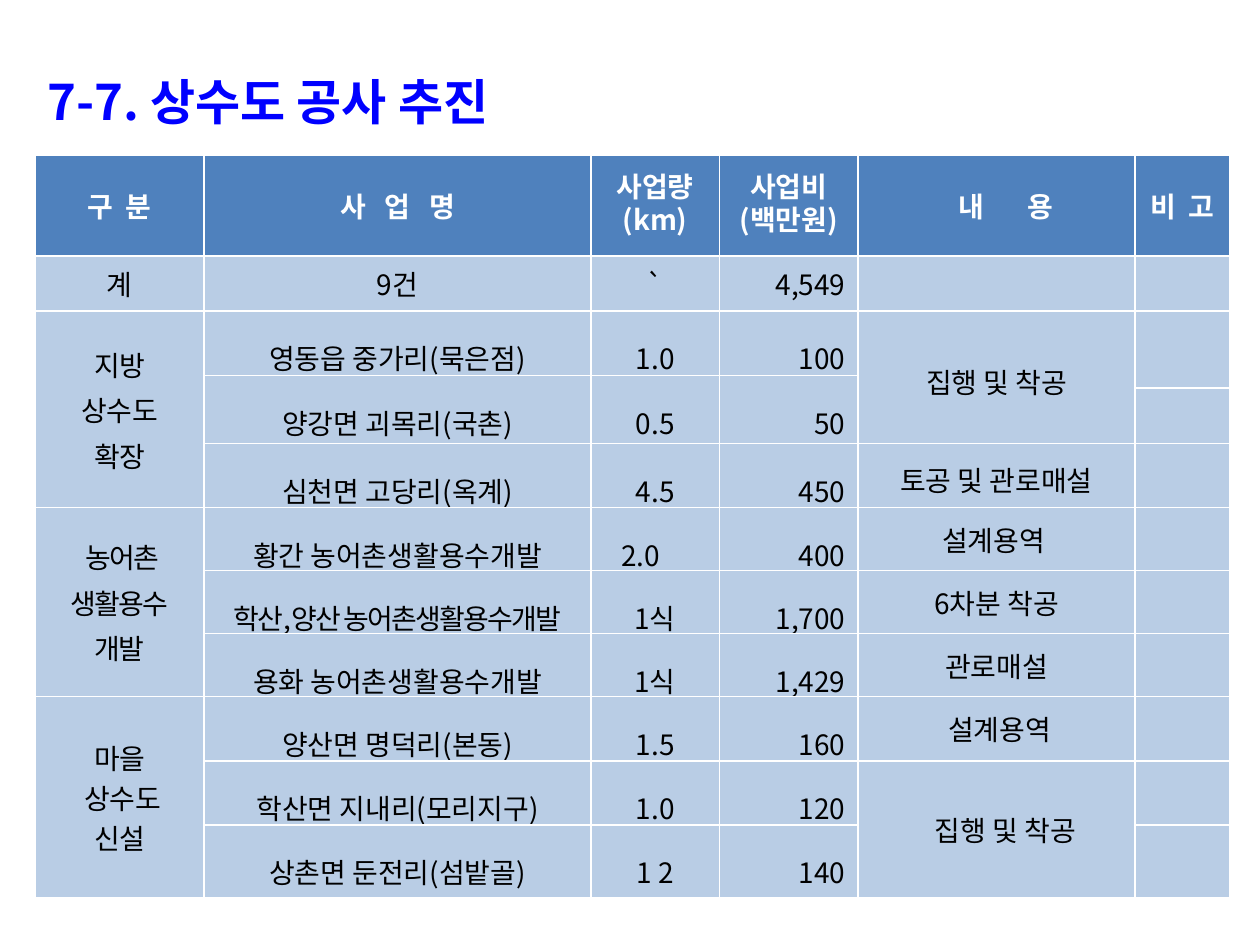
from lxml import etree
from pptx import Presentation
from pptx.dml.color import RGBColor
from pptx.enum.text import MSO_ANCHOR, MSO_AUTO_SIZE, PP_ALIGN
from pptx.oxml.ns import qn
from pptx.util import Inches, Pt

LEFT, CENTER, RIGHT = PP_ALIGN.LEFT, PP_ALIGN.CENTER, PP_ALIGN.RIGHT
MIDDLE = MSO_ANCHOR.MIDDLE
FONT = "Noto Sans CJK KR"
BLUE = RGBColor(0x00, 0x00, 0xFF)
HEADER_FILL = RGBColor(0x4F, 0x81, 0xBD)
BODY_FILL = RGBColor(0xB9, 0xCD, 0xE5)
WHITE = RGBColor(0xFF, 0xFF, 0xFF)
BLACK = RGBColor(0x00, 0x00, 0x00)

TITLE = "7-7. 상수도 공사 추진"
COL_WIDTHS = [1.34, 3.07, 1.02, 1.1, 2.2, 0.75]
ROW_HEIGHTS = [0.8, 0.44, 0.51, 0.1, 0.44, 0.51, 0.5, 0.5, 0.5, 0.51, 0.51, 0.58]
TABLE_LEFT, TABLE_TOP = 0.28, 1.23
CELL_MARGIN = 0.1

# text, format
HEADERS = [
    ("구 분", dict(tracking=1.8)),
    ("사 업 명", dict(tracking=3.6)),
    ("사업량\n(km)", dict(line=0.7)),
    ("사업비\n(백만원)", dict(line=0.7)),
    ("내 용", dict(tracking=10.8, shift=0.15)),
    ("비 고", dict(tracking=1.8)),
]
TOTALS = ["계", "9건", "`", "4,549"]

# first row, project, quantity, cost
PROJECTS = [
    (2, "영동읍 중가리(묵은점)", "1.0", "100"),
    (3, "양강면 괴목리(국촌)", "0.5", "50"),
    (5, "심천면 고당리(옥계)", "4.5", "450"),
    (6, "황간 농어촌생활용수개발", "2.0", "400"),
    (7, "학산,양산 농어촌생활용수개발", "1식", "1,700"),
    (8, "용화 농어촌생활용수개발", "1식", "1,429"),
    (9, "양산면 명덕리(본동)", "1.5", "160"),
    (10, "학산면 지내리(모리지구)", "1.0", "120"),
    (11, "상촌면 둔전리(섬밭골)", "1 2", "140"),
]
TIGHT_ROW, LEFT_QUANTITY_ROW = 7, 6

# first row, text, format
CATEGORIES = [
    (2, "지방\n상수도\n확장", {}),
    (6, " 농어촌\n생활용수\n개발", dict(tracking=-1)),
    (9, "마을\n 상수도\n신설", dict(gap=0)),
]
DETAILS = [
    (2, "집행 및 착공", dict(line=1.2)),
    (5, "토공 및 관로매설", dict(line=1.2)),
    (6, "설계용역 ", {}),
    (7, "6차분 착공", {}),
    (8, "관로매설", {}),
    (9, " 설계용역", {}),
    (10, "집행 및 착공", dict(shift=0.14)),
]
# column, first row, last row
MERGES = [(0, 2, 5), (0, 6, 8), (0, 9, 11), (1, 3, 4), (2, 3, 4), (3, 3, 4),
          (4, 2, 4), (4, 10, 11), (5, 2, 3)]


def write(tf, text, size=16, color=BLACK, bold=False, align=CENTER,
          line=None, gap=3, tracking=0):
    """Fill a text frame, one paragraph per line of text."""
    for i, part in enumerate(text.split("\n")):
        p = tf.add_paragraph() if i else tf.paragraphs[0]
        p.alignment = align
        p.space_before = Pt(gap if i else 0)
        if line:
            p.line_spacing = line
        r = p.add_run()
        r.text = part
        r.font.size, r.font.bold = Pt(size), bold
        r.font.name, r.font.color.rgb = FONT, color
        props = r.font._element
        if tracking:
            props.set("spc", str(round(tracking * 100)))
        latin = props.find(qn("a:latin"))
        ea = etree.Element(qn("a:ea"), typeface=FONT)
        latin.addnext(ea)


def write_cell(cell, text, shift=0, **fmt):
    cell.margin_left = Inches(CELL_MARGIN + shift)
    write(cell.text_frame, text, **fmt)


def add_borders(cell, color=WHITE, width=1):
    props = cell._tc.get_or_add_tcPr()
    for i, side in enumerate(("lnL", "lnR", "lnT", "lnB")):
        ln = etree.Element(qn(f"a:{side}"), w=str(Pt(width)))
        fill = etree.SubElement(ln, qn("a:solidFill"))
        etree.SubElement(fill, qn("a:srgbClr"), val=str(color))
        props.insert(i, ln)


def add_title(s):
    title = s.shapes.title
    title.left, title.top, title.width, title.height = map(
        Inches, (0.28, 0.52, 4.17, 0.57))
    tf = title.text_frame
    tf.word_wrap = False
    tf.auto_size = MSO_AUTO_SIZE.SHAPE_TO_FIT_TEXT
    tf.vertical_anchor = MSO_ANCHOR.TOP
    write(tf, TITLE, size=28, color=BLUE, bold=True, align=LEFT)


def add_project_table(s):
    n_rows, n_cols = len(ROW_HEIGHTS), len(COL_WIDTHS)
    table = s.shapes.add_table(
        n_rows, n_cols, Inches(TABLE_LEFT), Inches(TABLE_TOP),
        Inches(sum(COL_WIDTHS)), Inches(sum(ROW_HEIGHTS))).table
    for col, width in zip(table.columns, COL_WIDTHS):
        col.width = Inches(width)
    for row, height in zip(table.rows, ROW_HEIGHTS):
        row.height = Inches(height)

    for col, first, last in MERGES:
        table.cell(first, col).merge(table.cell(last, col))

    for col, (text, fmt) in enumerate(HEADERS):
        write_cell(table.cell(0, col), text, color=WHITE, bold=True, **fmt)
    for col, text in enumerate(TOTALS):
        write_cell(table.cell(1, col), text, align=RIGHT if col == 3 else CENTER)
    for row, name, quantity, cost in PROJECTS:
        write_cell(table.cell(row, 1), name, line=1.5,
                   tracking=-1 if row == TIGHT_ROW else 0)
        fmt = dict(align=LEFT, shift=0.14) if row == LEFT_QUANTITY_ROW else {}
        write_cell(table.cell(row, 2), quantity, line=1.5, **fmt)
        write_cell(table.cell(row, 3), cost, line=1.5, align=RIGHT)
    for col, entries in ((0, CATEGORIES), (4, DETAILS)):
        for row, text, fmt in entries:
            write_cell(table.cell(row, col), text, **fmt)

    for i, cell in enumerate(table.iter_cells()):
        cell.vertical_anchor = MIDDLE
        cell.fill.solid()
        cell.fill.fore_color.rgb = HEADER_FILL if i < n_cols else BODY_FILL
        add_borders(cell)
        if not cell.text_frame.text:  # keeps empty cells from stretching rows
            p = cell.text_frame.paragraphs[0]
            etree.SubElement(p._p, qn("a:endParaRPr"), sz="1600")


def main():
    prs = Presentation()
    prs.slide_width, prs.slide_height = Inches(10), Inches(7.5)
    s = prs.slides.add_slide(prs.slide_layouts[5])
    add_title(s)
    add_project_table(s)
    prs.save("out.pptx")


if __name__ == "__main__":
    main()
